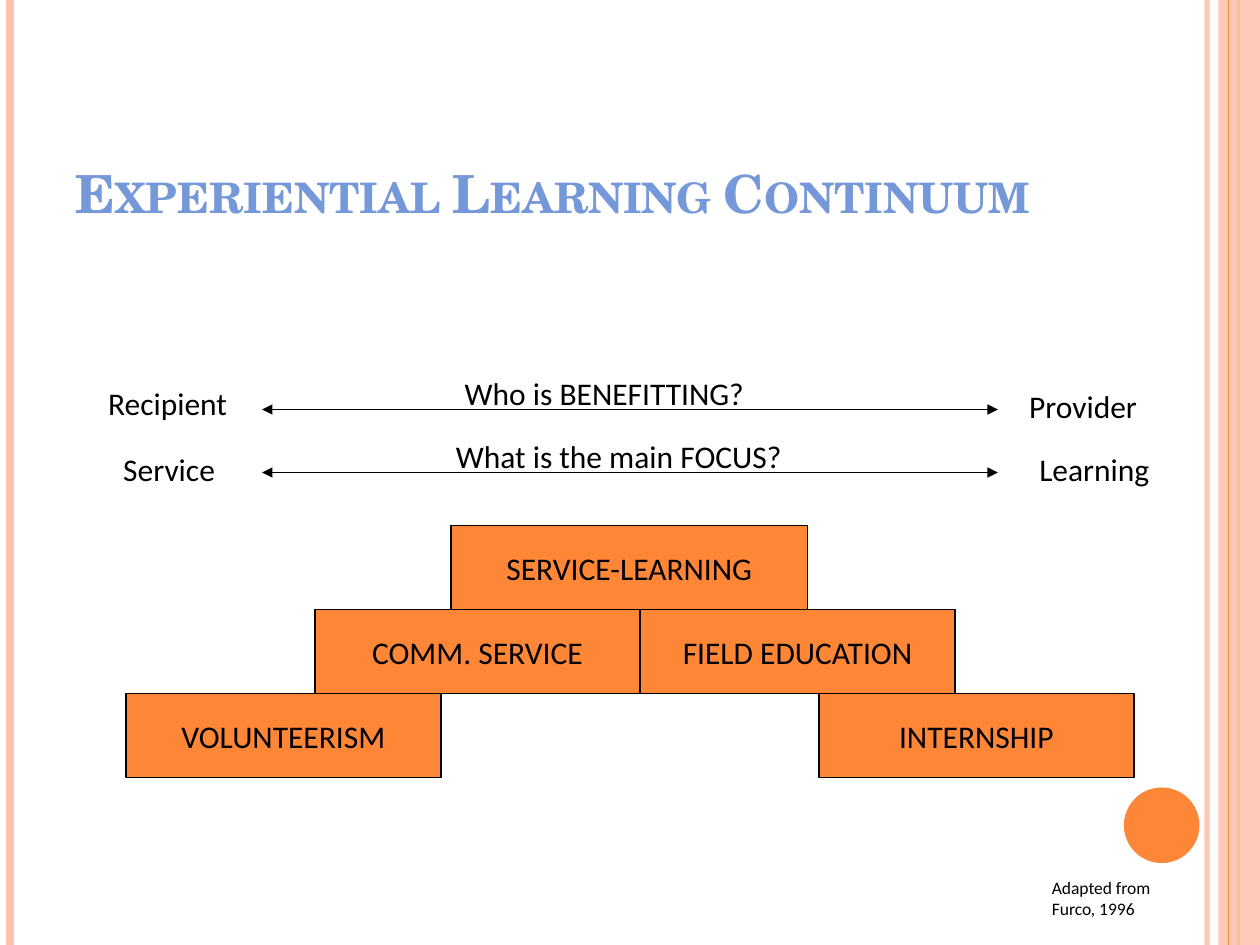
"""Build a slide that sets out the experiential learning continuum."""
import dataclasses
import pptx
import pptx.dml.color
import pptx.enum.shapes
import pptx.enum.text
import pptx.oxml.ns
import pptx.util
from lxml import etree

Inches = pptx.util.Inches
Pt = pptx.util.Pt
ALIGN = pptx.enum.text.PP_ALIGN
ANCHOR = pptx.enum.text.MSO_ANCHOR
FIT = pptx.enum.text.MSO_AUTO_SIZE
KIND = pptx.enum.shapes.MSO_SHAPE
qn = pptx.oxml.ns.qn

COLORS = {"orange": "FE8637", "peach": "FEC3AE", "blue": "7598D9", "black": "000000"}
TALL = 7.5
STEP = 0.67


@dataclasses.dataclass
class Stripe:
    x: float
    color: str
    width: float
    alpha: int = 100


@dataclasses.dataclass
class Block:
    text: str
    left: float
    row: int
    width: float


@dataclasses.dataclass
class Label:
    text: str
    left: float
    top: float
    width: float
    height: float = 0.4
    size: int = 18
    wrap: bool = False


STRIPES = [Stripe(9.58, "peach", 3, 93), Stripe(0.08, "peach", 4.5), Stripe(9.83, "orange", 1.5)]
EDGE = Stripe(9.75, "orange", 0.75)
BLOCKS = [
    Block("SERVICE-LEARNING", 3.58, 0, 2.83),
    Block("FIELD EDUCATION", 5.08, 1, 2.5),
    Block("COMM. SERVICE", 2.5, 1, 2.58),
    Block("INTERNSHIP", 6.5, 2, 2.5),
    Block("VOLUNTEERISM", 1, 2, 2.5),
]
LABELS = [
    Label("Who is BENEFITTING?", 3.59, 2.92, 2.83),
    Label("What is the main FOCUS?", 3.52, 3.42, 3.15),
    Label("Provider", 8.07, 3.02, 1.13),
    Label("Learning", 8.15, 3.52, 1.17),
    Label("Recipient", 0.76, 3, 1.24),
    Label("Service", 0.88, 3.52, 1.03),
    Label("Adapted from\vFurco, 1996", 8.25, 6.91, 1, 0.44, 10, True),
]


def tint(color: str) -> pptx.dml.color.RGBColor:
    """Return a named colour."""
    return pptx.dml.color.RGBColor.from_string(COLORS[color])


def fade(shape, alpha: int) -> None:
    """Make the first colour of a shape partly clear."""
    node = next(shape._element.spPr.iter(qn("a:srgbClr")))
    etree.SubElement(node, qn("a:alpha"), val=str(alpha * 1000))


def write(shape, text: str, *, size: int = 18, font: str = "Calibri", color: str = "black",
          bold: bool = False, caps: bool = False, align=ALIGN.LEFT, anchor=ANCHOR.TOP,
          wrap: bool = False, fit=FIT.NONE) -> None:
    """Put formatted text into a shape."""
    frame = shape.text_frame
    frame.word_wrap, frame.auto_size, frame.vertical_anchor = wrap, fit, anchor
    para = frame.paragraphs[0]
    para.text, para.alignment = text, align
    for run in para.runs:
        run.font.size, run.font.name, run.font.bold = Pt(size), font, bold
        run.font.color.rgb = tint(color)
        if caps:
            run._r.get_or_add_rPr().set("cap", "small")


def draw_line(slide, start: tuple, end: tuple, color: str, width: float):
    """Draw a straight line with no shadow."""
    line = slide.shapes.add_connector(
        pptx.enum.shapes.MSO_CONNECTOR.STRAIGHT, *map(Inches, start + end))
    line.line.color.rgb, line.line.width = tint(color), Pt(width)
    etree.SubElement(line._element.spPr, qn("a:effectLst"))
    return line


def draw_stripe(slide, stripe: Stripe) -> None:
    """Draw a stripe down the whole slide."""
    line = draw_line(slide, (stripe.x, 0), (stripe.x, TALL), stripe.color, stripe.width)
    if stripe.alpha < 100:
        fade(line, stripe.alpha)


def draw_arrow(slide, y: float) -> None:
    """Draw a level arrow with a head at each end."""
    line = draw_line(slide, (2.08, y), (7.92, y), "black", 0.75)
    for end in ("headEnd", "tailEnd"):
        etree.SubElement(line.line._get_or_add_ln(), qn(f"a:{end}"), type="triangle")


def draw_shape(slide, kind, box: tuple, color: str):
    """Draw a filled shape with no outline or shadow."""
    shape = slide.shapes.add_shape(kind, *map(Inches, box))
    shape.shadow.inherit = False
    shape.fill.solid()
    shape.fill.fore_color.rgb = tint(color)
    shape.line.fill.background()
    return shape


def draw_block(slide, block: Block) -> None:
    """Draw one outlined block of the pyramid."""
    top = 4.17 + block.row * 2 / 3
    shape = draw_shape(slide, KIND.RECTANGLE, (block.left, top, block.width, STEP), "orange")
    shape.line.color.rgb, shape.line.width = tint("black"), Pt(0.75)
    write(shape, block.text, align=ALIGN.CENTER, anchor=ANCHOR.MIDDLE)


def draw_label(slide, label: Label) -> None:
    """Draw a plain text label."""
    box = slide.shapes.add_textbox(
        *map(Inches, (label.left, label.top, label.width, label.height)))
    write(box, label.text, size=label.size, wrap=label.wrap, fit=FIT.SHAPE_TO_FIT_TEXT)


def set_title(slide) -> None:
    """Place and format the title."""
    title = slide.shapes.title
    title.left, title.top, title.width, title.height = map(Inches, (0.5, 0.3, 9, 2.03))
    title.text_frame.margin_bottom = Inches(0.55)
    write(title, "Experiential Learning Continuum", size=30, font="TeX Gyre Schola",
          color="blue", bold=True, caps=True, anchor=ANCHOR.BOTTOM, wrap=True)


def main() -> None:
    """Build and save the slide."""
    deck = pptx.Presentation()
    deck.slide_width, deck.slide_height = Inches(10), Inches(TALL)
    slide = deck.slides.add_slide(deck.slide_layouts[5])
    set_title(slide)
    for stripe in STRIPES:
        draw_stripe(slide, stripe)
    fade(draw_shape(slide, KIND.RECTANGLE, (9.67, 0, 0.33, TALL), "peach"), 87)
    draw_stripe(slide, EDGE)
    draw_shape(slide, KIND.OVAL, (8.92, 6.25, 0.6, 0.6), "orange")
    for block in BLOCKS:
        draw_block(slide, block)
    for y in (3.25, 3.75):
        draw_arrow(slide, y)
    for label in LABELS:
        draw_label(slide, label)
    deck.save("out.pptx")


if __name__ == "__main__":
    main()
